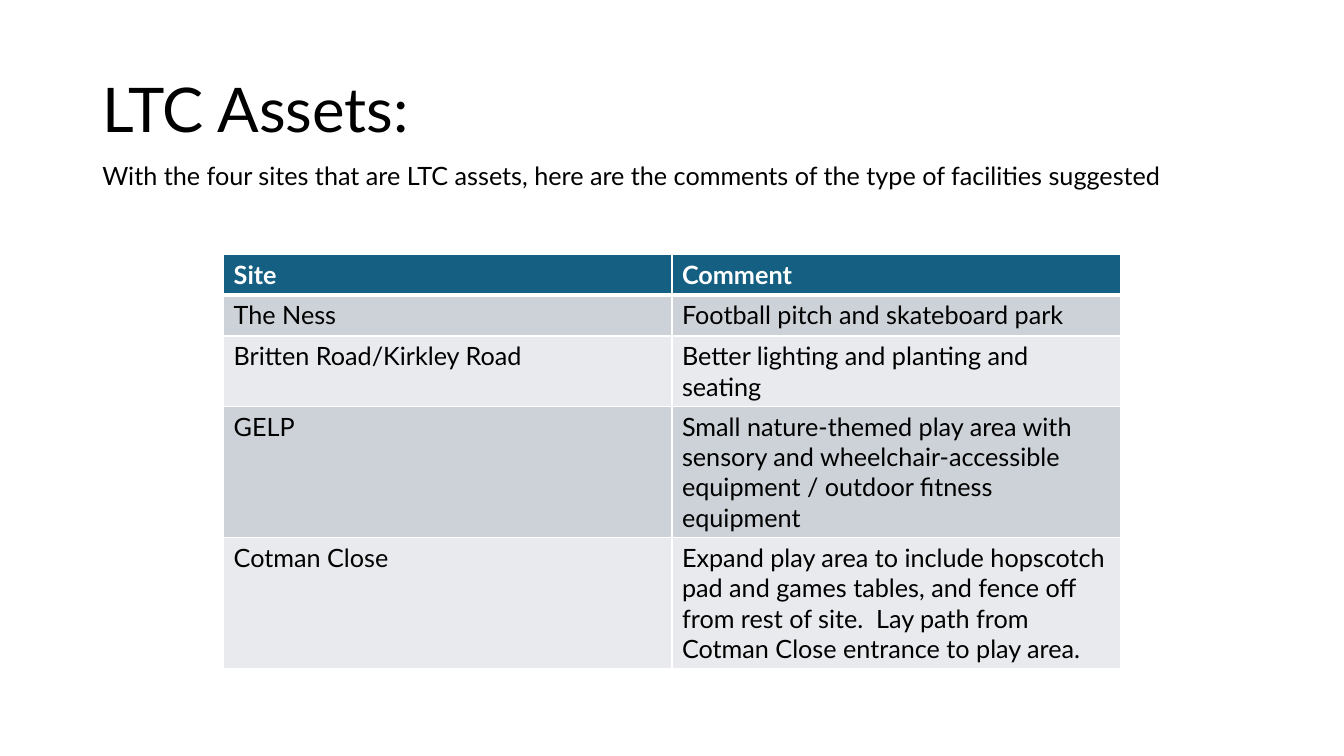
from lxml.etree import SubElement as Sub
from pptx import Presentation
from pptx.dml.color import RGBColor
from pptx.enum.text import MSO_ANCHOR as Anchor, MSO_AUTO_SIZE as Auto, PP_ALIGN as Align
from pptx.oxml.ns import qn
from pptx.util import Emu, Pt

PX = 9525
FONT = "Lato"
BLACK, WHITE, TEAL = "000000", "FFFFFF", "156082"
BANDS = ["CCD2D8", "E8EAED"]
ROWS = [
    ("Site", "Comment"),
    ("The Ness", "Football pitch and skateboard park"),
    ("Britten Road/Kirkley Road", "Better lighting and planting and seating"),
    ("GELP", "Small nature-themed play area with sensory and "
     "wheelchair-accessible equipment / outdoor fitness equipment"),
    ("Cotman Close", "Expand play area to include hopscotch pad and games tables, "
     "and fence off from rest of site.  Lay path from Cotman Close entrance to play area."),
]
HEIGHTS = [39, 39, 67, 125, 125]


def px(*sizes):
    """Turn whole pixels into EMU lengths."""
    return [Emu(size * PX) for size in sizes]


def paint(item, color):
    """Give a fill or a font a solid hex colour."""
    if hasattr(item, "solid"):
        item.solid()
        item = item.fore_color
    else:
        item = item.color
    item.rgb = RGBColor.from_string(color)


def write(frame, text, size, color=BLACK, bold=False):
    """Set one left-aligned paragraph and format its run."""
    frame.text = text
    para = frame.paragraphs[0]
    para.alignment = Align.LEFT
    font = para.runs[0].font
    font.name, font.size, font.bold = FONT, Pt(size), bold
    paint(font, color)
    return para


def edge(cell, head):
    """Draw white borders, with a thick rule under the header."""
    props = cell._tc.get_or_add_tcPr()
    for spot, side in enumerate("LRTB"):
        width = 3 if head and side == "B" else 1
        line = Sub(props, qn(f"a:ln{side}"), w=str(Pt(width)))
        Sub(Sub(line, qn("a:solidFill")), qn("a:srgbClr"), val=WHITE)
        props.insert(spot, line)


def add_title(slide, box, text):
    """Place the slide title in its box."""
    title = slide.shapes.title
    title.left, title.top, title.width, title.height = px(*box)
    frame = title.text_frame
    frame.vertical_anchor, frame.auto_size = Anchor.MIDDLE, Auto.NONE
    write(frame, text, 44).line_spacing = 0.9


def add_intro(slide, box, text):
    """Place the introductory line in its box."""
    frame = slide.shapes.add_textbox(*px(*box)).text_frame
    frame.word_wrap = True
    para = write(frame, text, 18)
    para.line_spacing, para.space_before = 0.9, Pt(10)


def add_sites(slide, box, rows, heights):
    """Build the table of sites and comments in its box."""
    table = slide.shapes.add_table(len(rows), len(rows[0]), *px(*box)).table
    for r, (row, high) in enumerate(zip(rows, heights)):
        table.rows[r].height = px(high)[0]
        head = r == 0
        for c, text in enumerate(row):
            cell = table.cell(r, c)
            paint(cell.fill, TEAL if head else BANDS[(r - 1) % 2])
            write(cell.text_frame, text, 18, WHITE if head else BLACK, head)
            edge(cell, head)


def main():
    """Build the slide and save it."""
    deck = Presentation()
    deck.slide_width, deck.slide_height = px(1280, 720)
    slide = deck.slides.add_slide(deck.slide_layouts[5])
    add_title(slide, (88, 38, 1104, 139), "LTC Assets:")
    add_intro(slide, (88, 151, 1104, 117),
              "With the four sites that are LTC assets, here are the comments "
              "of the type of facilities suggested")
    add_sites(slide, (213, 242, 854, sum(HEIGHTS)), ROWS, HEIGHTS)
    deck.save("out.pptx")


if __name__ == "__main__":
    main()
